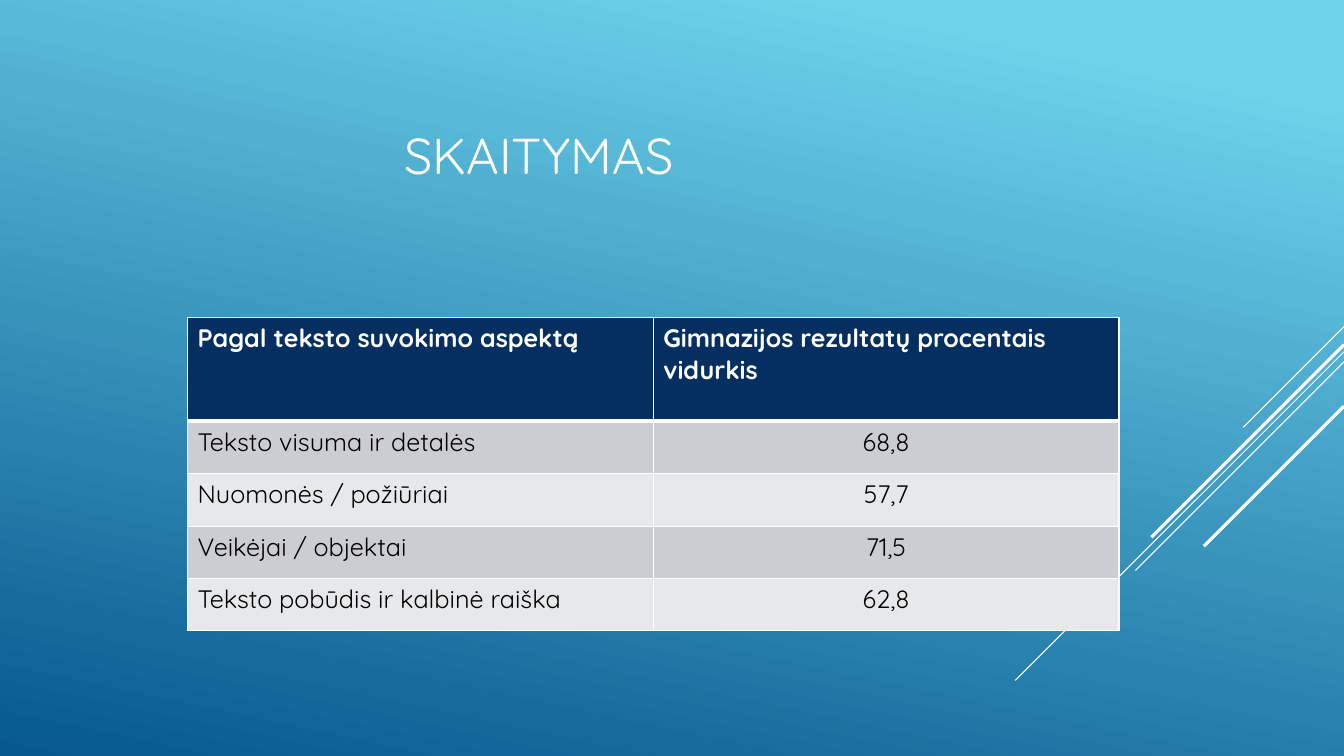
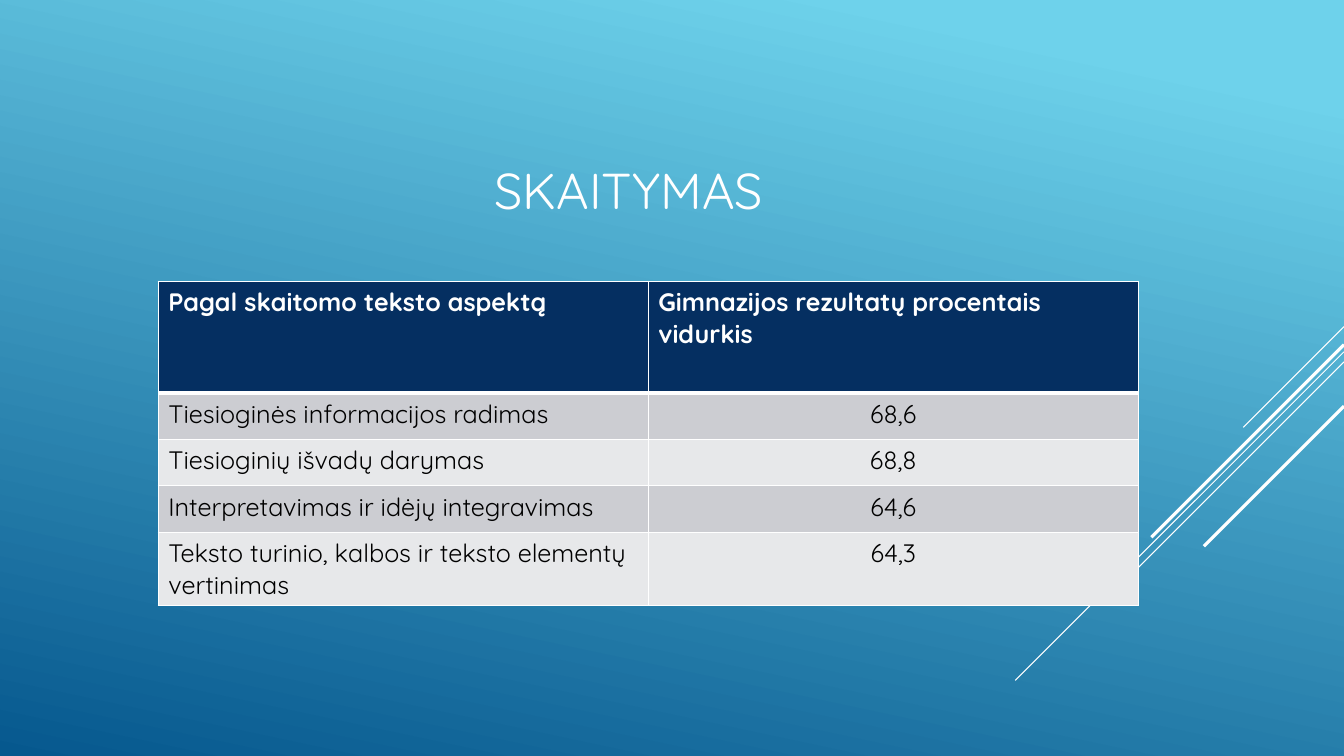
"""Builds two slides of reading results, each a title above a table."""
import pptx
import pptx.dml.color
import pptx.enum.shapes
import pptx.enum.text
import pptx.oxml
import pptx.oxml.ns
import pptx.util

Inches, Pt = pptx.util.Inches, pptx.util.Pt
RGBColor = pptx.dml.color.RGBColor
Align = pptx.enum.text.PP_ALIGN

WHITE = RGBColor(0xFF, 0xFF, 0xFF)
BLACK = RGBColor(0x00, 0x00, 0x00)
NAVY = RGBColor(0x05, 0x2F, 0x61)
BANDS = RGBColor(0xCC, 0xCD, 0xD2), RGBColor(0xE7, 0xE8, 0xEA)
BACKDROP = (0.1, RGBColor(0x6E, 0xD2, 0xEB)), (1, RGBColor(0x06, 0x58, 0x8E))
BACKDROP_ANGLE = 258

SLIDE_WIDTH, SLIDE_HEIGHT = 13.33, 7.5
FONT = "Quicksand"
TITLE_FORMAT = {"name": FONT, "size": Pt(36), "bold": False}
HEADER_FORMAT = {"name": FONT, "size": Pt(18), "bold": True}
BODY_FORMAT = {"name": FONT, "size": Pt(18), "bold": False}
THIN_BORDER, HEADER_RULE = 1, 3

DIAGONALS = [
    {"top": 3.24, "run": 1.0, "weight": 0.75},
    {"top": 3.49, "run": 3.26, "weight": 0.75},
    {"top": 3.59, "run": 2.07, "weight": 0.75},
    {"top": 3.42, "run": 1.91, "weight": 2.25},
    {"top": 4.03, "run": 1.39, "weight": 2.25},
]

TITLE = "SKAITYMAS "
RESULT_HEADING = "Gimnazijos rezultatų procentais vidurkis"
SLIDES = [
    {
        "title_box": (0.75, 0.83, 9.33, 1.05),
        "corner": (1.86, 3.15),
        "column": 4.62,
        "heights": (1.03, 0.52, 0.52, 0.52, 0.52),
        "aspect": "Pagal teksto suvokimo aspektą",
        "results": [
            ("Teksto visuma ir detalės", "68,8"),
            ("Nuomonės / požiūriai", "57,7"),
            ("Veikėjai / objektai", "71,5"),
            ("Teksto pobūdis ir kalbinė raiška", "62,8"),
        ],
    },
    {
        "title_box": (0.75, 0.69, 11.11, 1.54),
        "corner": (1.57, 2.79),
        "column": 4.86,
        "heights": (1.11, 0.46, 0.46, 0.46, 0.73),
        "aspect": "Pagal skaitomo teksto aspektą",
        "results": [
            ("Tiesioginės informacijos radimas", "68,6"),
            ("Tiesioginių išvadų darymas", "68,8"),
            ("Interpretavimas ir idėjų integravimas", "64,6"),
            ("Teksto turinio, kalbos ir teksto elementų vertinimas", "64,3"),
        ],
    },
]


def write(frame, text, font_format, color, align):
    paragraph = frame.paragraphs[0]
    paragraph.alignment = align
    run = paragraph.add_run()
    run.text = text
    for attribute, value in font_format.items():
        setattr(run.font, attribute, value)
    run.font.color.rgb = color


def paint_backdrop(master):
    fill = master.background.fill
    fill.gradient()
    fill.gradient_angle = BACKDROP_ANGLE
    for stop, (position, color) in zip(fill.gradient_stops, BACKDROP):
        stop.position = position
        stop.color.rgb = color


def add_diagonals(slide):
    for diagonal in DIAGONALS:
        top, run = diagonal["top"], diagonal["run"]
        line = slide.shapes.add_connector(
            pptx.enum.shapes.MSO_CONNECTOR.STRAIGHT,
            Inches(SLIDE_WIDTH), Inches(top),
            Inches(SLIDE_WIDTH - run), Inches(top + run))
        line.line.color.rgb = WHITE
        line.line.width = Pt(diagonal["weight"])
        properties = line._element.spPr
        properties.append(properties.makeelement(pptx.oxml.ns.qn("a:effectLst"), {}))


def add_title(slide, box):
    frame = slide.shapes.add_textbox(*map(Inches, box)).text_frame
    frame.word_wrap = True
    frame.vertical_anchor = pptx.enum.text.MSO_ANCHOR.BOTTOM
    write(frame, TITLE, TITLE_FORMAT, WHITE, Align.CENTER)


def set_borders(cell, weights):
    properties = cell._tc.get_or_add_tcPr()
    for index, (side, weight) in enumerate(weights.items()):
        properties.insert(index, pptx.oxml.parse_xml(
            f'<a:ln{side} {pptx.oxml.ns.nsdecls("a")} w="{Pt(weight)}">'
            f'<a:solidFill><a:srgbClr val="{WHITE}"/></a:solidFill></a:ln{side}>'))


def add_results(slide, content):
    rows = [(content["aspect"], RESULT_HEADING), *content["results"]]
    heights, column = content["heights"], content["column"]
    left, top = content["corner"]
    table = slide.shapes.add_table(
        len(rows), 2, Inches(left), Inches(top),
        Inches(2 * column), Inches(sum(heights))).table
    table.horz_banding = False
    for table_column in table.columns:
        table_column.width = Inches(column)
    for r, (row, height) in enumerate(zip(rows, heights)):
        table.rows[r].height = Inches(height)
        header = r == 0
        borders = {
            "L": THIN_BORDER,
            "R": THIN_BORDER,
            "T": HEADER_RULE if r == 1 else THIN_BORDER,
            "B": HEADER_RULE if header else THIN_BORDER,
        }
        for c, text in enumerate(row):
            cell = table.cell(r, c)
            cell.fill.solid()
            cell.fill.fore_color.rgb = NAVY if header else BANDS[(r - 1) % 2]
            set_borders(cell, borders)
            write(cell.text_frame, text,
                  HEADER_FORMAT if header else BODY_FORMAT,
                  WHITE if header else BLACK,
                  Align.CENTER if c and not header else Align.LEFT)


def main():
    deck = pptx.Presentation()
    deck.slide_width, deck.slide_height = Inches(SLIDE_WIDTH), Inches(SLIDE_HEIGHT)
    paint_backdrop(deck.slide_master)
    for content in SLIDES:
        slide = deck.slides.add_slide(deck.slide_layouts[6])
        add_diagonals(slide)
        add_title(slide, content["title_box"])
        add_results(slide, content)
    deck.save("out.pptx")


if __name__ == "__main__":
    main()
